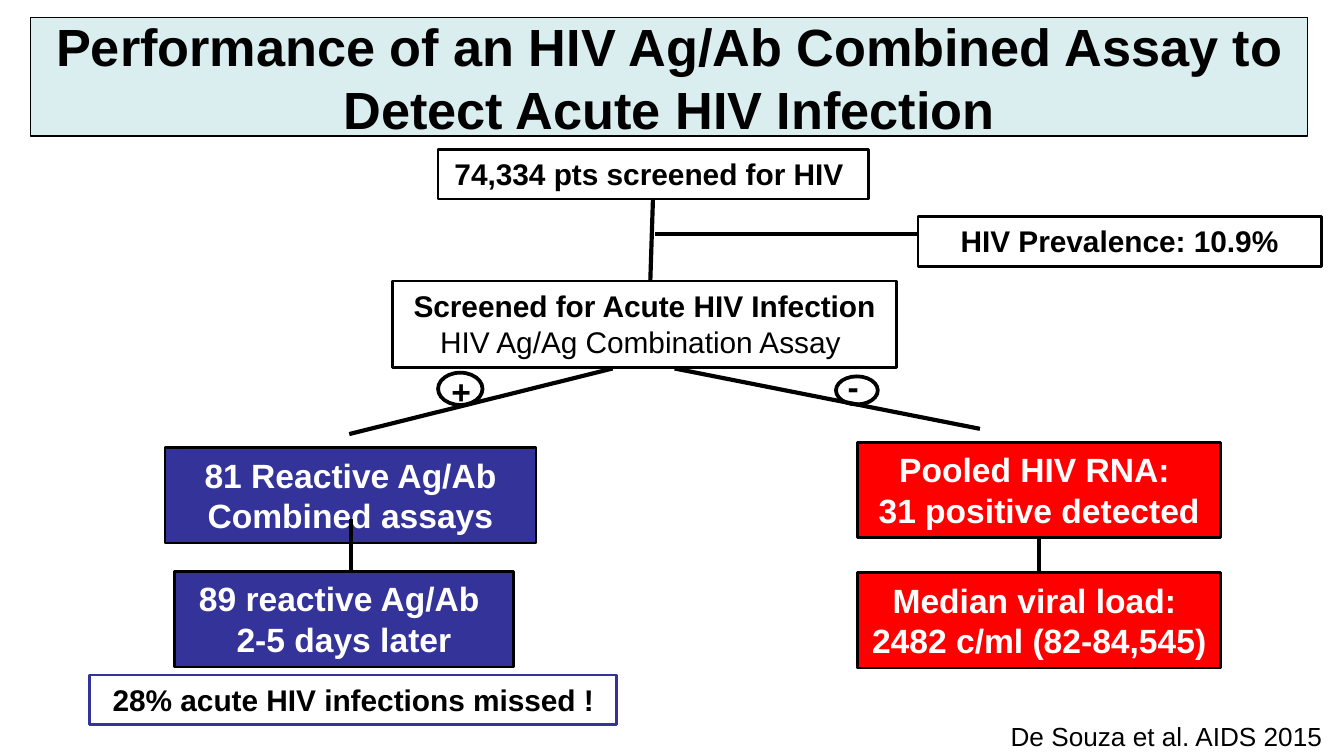
from lxml.etree import SubElement
from pptx import Presentation
from pptx.dml.color import RGBColor
from pptx.enum.shapes import MSO_CONNECTOR as Connector, MSO_SHAPE as Shape
from pptx.enum.text import MSO_ANCHOR as Anchor, MSO_AUTO_SIZE as AutoSize, PP_ALIGN as Align
from pptx.oxml.ns import qn
from pptx.util import Cm, Pt

BLACK, WHITE = "000000", "FFFFFF"
BLUE, RED, PALE = "333399", "FF0000", "DAEDEF"


def color(hex_code):
    return RGBColor.from_string(hex_code)


class FlowSlide:
    """Holds the style and the slide that the elements are drawn on."""

    font = "Arial"
    connector_width = 2.25
    box_width = 1.5

    def __init__(self, slide):
        self.slide = slide

    def set_text(self, shape, lines, size, text_color=BLACK, bold=True, align=Align.CENTER,
                 anchor=Anchor.TOP, wrap=True, plain_lines=()):
        """Put one paragraph per line; plain_lines are the indexes not set in bold."""
        frame = shape.text_frame
        frame.text = "\n".join(lines)
        frame.word_wrap = wrap
        frame.vertical_anchor = anchor
        frame.auto_size = AutoSize.NONE
        for index, paragraph in enumerate(frame.paragraphs):
            paragraph.alignment = align
            for run in paragraph.runs:
                run.font.name = self.font
                run.font.size = Pt(size)
                run.font.bold = bold and index not in plain_lines
                run.font.color.rgb = color(text_color)

    def outline(self, preset, place, fill, line, width):
        shape = self.slide.shapes.add_shape(preset, *map(Cm, place))
        shape.shadow.inherit = False
        if fill:
            shape.fill.solid()
            shape.fill.fore_color.rgb = color(fill)
        else:
            shape.fill.background()
        shape.line.color.rgb = color(line)
        shape.line.width = Pt(width)
        return shape

    def box(self, place, lines, size=16, fill=None, line=BLACK, width=box_width, **style):
        shape = self.outline(Shape.RECTANGLE, place, fill, line, width)
        self.set_text(shape, lines, size, **style)

    def result(self, place, lines, fill):
        self.box(place, lines, size=18, fill=fill, text_color=WHITE)

    def label(self, place, text, size, **style):
        shape = self.slide.shapes.add_textbox(*map(Cm, place))
        self.set_text(shape, [text], size, align=Align.LEFT, **style)

    def circle(self, place):
        self.outline(Shape.FLOWCHART_CONNECTOR, place, None, BLACK, 2)

    def connect(self, start, end):
        line = self.slide.shapes.add_connector(Connector.STRAIGHT, *map(Cm, start + end))
        line.line.color.rgb = color(BLACK)
        line.line.width = Pt(self.connector_width)
        SubElement(line._element.spPr, qn("a:effectLst"))


def main():
    presentation = Presentation()
    presentation.slide_width = Cm(25.4)
    presentation.slide_height = Cm(14.28)
    flow = FlowSlide(presentation.slides.add_slide(presentation.slide_layouts[6]))

    # Screening step and its two branches
    flow.box((7.42, 5.31, 9.53, 1.63),
             ["Screened for Acute HIV Infection", "HIV Ag/Ag Combination Assay "],
             fill=WHITE, plain_lines=(1,))
    flow.connect((11.58, 6.96), (6.6, 8.2))
    flow.connect((12.75, 6.96), (18.52, 8.1))

    # Results
    flow.result((3.12, 8.46, 7.01, 1.8), ["81 Reactive Ag/Ab Combined assays"], BLUE)
    flow.result((16.21, 8.36, 6.86, 1.8), ["Pooled HIV RNA: ", "31 positive detected"], RED)
    flow.result((3.3, 10.8, 6.4, 1.8), ["89 reactive Ag/Ab ", "2-5 days later"], BLUE)
    flow.result((16.21, 10.82, 6.86, 1.8),
                ["Median viral load: ", "2482 c/ml (82-84,545)"], RED)
    flow.box((1.7, 12.75, 9.96, 0.94), ["28% acute HIV infections missed !"],
             fill=WHITE, line=BLUE)

    # Screened population and prevalence
    flow.box((8.28, 2.82, 8.13, 0.94), ["74,334 pts screened for HIV "], wrap=False)
    flow.connect((12.34, 3.76), (12.29, 5.31))
    flow.box((17.35, 4.09, 7.62, 0.94), ["HIV Prevalence: 10.9%"])
    flow.connect((17.35, 4.42), (12.37, 4.42))
    flow.connect((19.63, 10.82), (19.63, 10.16))

    flow.label((18.85, 13.49, 6.55, 0.86), "De Souza et al. AIDS 2015", 14, bold=False)
    flow.box((0.58, 0.33, 24.13, 2.24),
             ["Performance of an HIV Ag/Ab Combined Assay to Detect Acute HIV Infection"],
             size=28, fill=PALE, width=0.75, anchor=Anchor.MIDDLE)
    flow.connect((6.63, 10.8), (6.63, 9.8))

    # Signs on the branches
    flow.label((8.28, 6.88, 0.89, 1.02), "+", 18, wrap=False)
    flow.label((15.77, 6.78, 0.74, 1.02), "-", 18, wrap=False)
    flow.circle((8.28, 7.04, 0.84, 0.61))
    flow.circle((15.8, 7.11, 0.79, 0.53))

    presentation.save("out.pptx")


if __name__ == "__main__":
    main()
